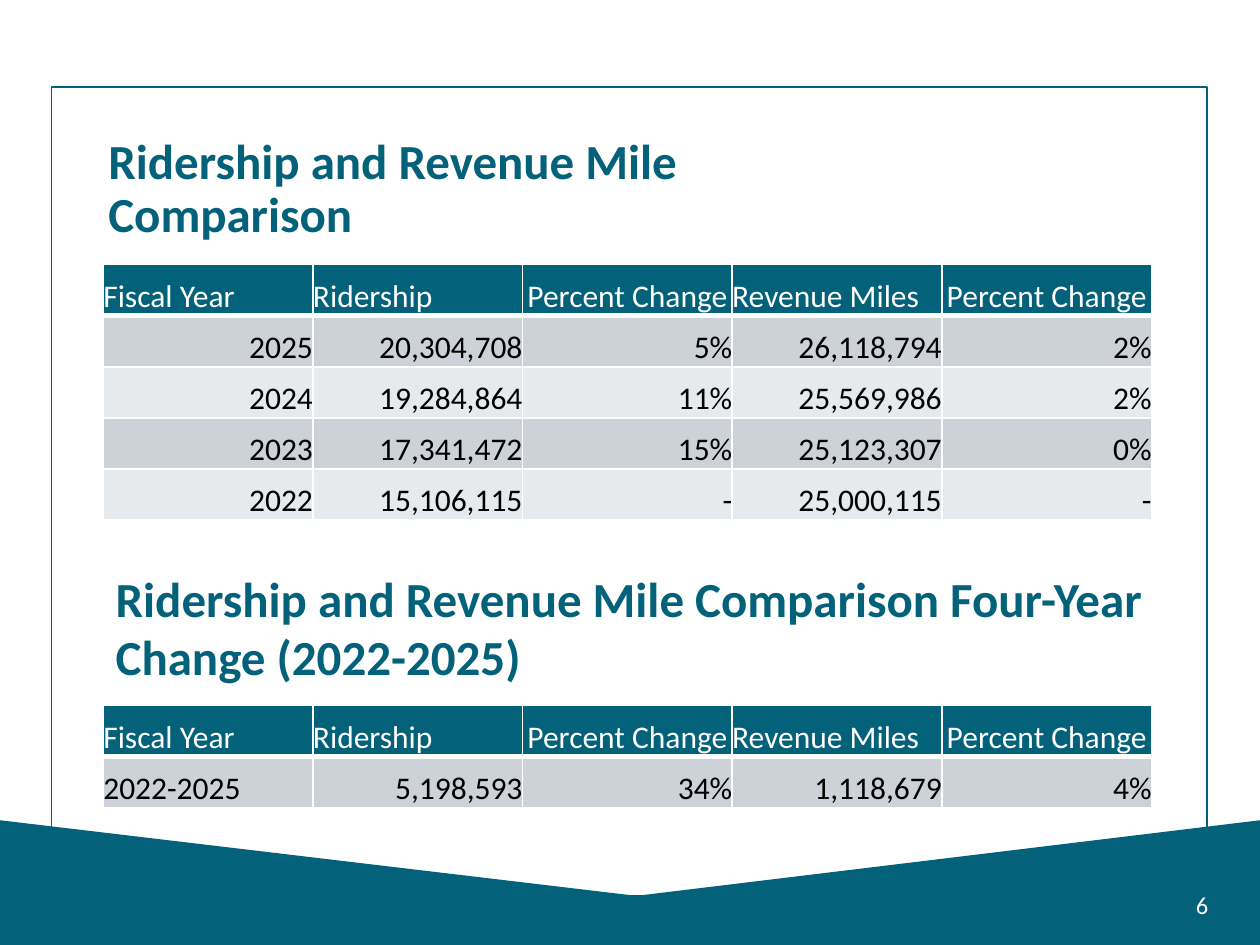
from collections import namedtuple

from lxml.etree import SubElement
from pptx import Presentation
from pptx.dml.color import RGBColor
from pptx.enum.shapes import MSO_SHAPE
from pptx.enum.text import MSO_ANCHOR as ANCHOR, MSO_AUTO_SIZE as AUTO, PP_ALIGN as ALIGN
from pptx.oxml.ns import qn
from pptx.util import Inches, Pt

TEAL = RGBColor(0x03, 0x61, 0x7A)
WHITE = RGBColor(0xFF, 0xFF, 0xFF)
BLACK = RGBColor(0x00, 0x00, 0x00)
BANDS = RGBColor(0xCC, 0xD2, 0xD7), RGBColor(0xE7, 0xEA, 0xEC)
FONT = "Calibri"
W, H = Inches(10), Inches(7.5)
ROW_SHARE = 5.41

HEADER = ["Fiscal Year", "Ridership", "Percent Change", "Revenue Miles", "Percent Change"]
YEARLY = [
    ["2025", "20,304,708", "5%", "26,118,794", "2%"],
    ["2024", "19,284,864", "11%", "25,569,986", "2%"],
    ["2023", "17,341,472", "15%", "25,123,307", "0%"],
    ["2022", "15,106,115", "-", "25,000,115", "-"],
]
FOUR_YEAR = [["2022-2025", "5,198,593", "34%", "1,118,679", "4%"]]

Box = namedtuple("Box", "x y w h")


def share(x, y, w, h):
    """Return a box from percentages of the slide's width and height."""
    return Box(int(W * x / 100), int(H * y / 100), int(W * w / 100), int(H * h / 100))


def add_run(p, text, size, color, bold=False):
    """Add one formatted run to a paragraph and return it."""
    r = p.add_run()
    r.text = text
    r.font.name, r.font.size, r.font.bold = FONT, Pt(size), bold
    r.font.color.rgb = color
    return r


def add_band(slide, box):
    """Draw the notched band along the bottom of the slide."""
    outline = [(0, 0), (0.5, 0.6), (0.51, 0.6), (1, 0), (1, 1), (0, 1)]
    points = [(box.x + box.w * u, box.y + box.h * v) for u, v in outline]
    builder = slide.shapes.build_freeform(*points[0])
    builder.add_line_segments(points[1:], close=True)
    sp = builder.convert_to_shape()
    sp.shadow.inherit = False
    sp.fill.solid()
    sp.fill.fore_color.rgb = TEAL
    sp.line.fill.background()


def add_frame(slide, box):
    """Draw the thin frame around the content."""
    sp = slide.shapes.add_shape(MSO_SHAPE.RECTANGLE, *box)
    sp.shadow.inherit = False
    sp.fill.background()
    sp.line.color.rgb = TEAL
    sp.line.width = Pt(1)


def add_page_number(slide, box, number):
    """Write the page number on the band."""
    tf = slide.shapes.add_textbox(*box).text_frame
    tf.word_wrap = True
    tf.vertical_anchor = ANCHOR.BOTTOM
    tf.margin_left = tf.margin_right = 0
    p = tf.paragraphs[0]
    p.alignment = ALIGN.RIGHT
    r = add_run(p, number, 14, WHITE)
    r.font._element.set("spc", "110")


def fill_heading(sp, text, spacing=1.0):
    """Write a bold heading into a title placeholder or text box."""
    tf = sp.text_frame
    tf.word_wrap = True
    tf.auto_size = AUTO.SHAPE_TO_FIT_TEXT
    tf.vertical_anchor = ANCHOR.TOP
    p = tf.paragraphs[0]
    p.alignment = ALIGN.LEFT
    p.line_spacing = spacing
    add_run(p, text, 28, TEAL, bold=True)


def add_title(slide, box, text):
    """Place and fill the title placeholder."""
    sp = slide.shapes.title
    sp.left, sp.top, sp.width, sp.height = box
    fill_heading(sp, text, 0.9)


def add_subheading(slide, box, text):
    """Add the heading of the lower table."""
    fill_heading(slide.shapes.add_textbox(*box), text)


def set_borders(cell, top, bottom):
    """Give a cell white borders, with top and bottom widths in points."""
    tc_pr = cell._tc.get_or_add_tcPr()
    for i, (side, width) in enumerate(zip("LRTB", (1, 1, top, bottom))):
        ln = SubElement(tc_pr, qn(f"a:ln{side}"), w=str(Pt(width)))
        SubElement(SubElement(ln, qn("a:solidFill")), qn("a:srgbClr"), val=str(WHITE))
        tc_pr.remove(ln)
        tc_pr.insert(i, ln)


def fill_cell(cell, text, align, color, fill):
    """Write and colour one table cell."""
    cell.fill.solid()
    cell.fill.fore_color.rgb = fill
    cell.vertical_anchor = ANCHOR.BOTTOM
    cell.margin_left = cell.margin_right = cell.margin_top = cell.margin_bottom = 0
    p = cell.text_frame.paragraphs[0]
    p.alignment = align
    add_run(p, text, 18, color)


def add_comparison(slide, x, y, w, body, year_align):
    """Add a table with a dark header row above banded rows."""
    rows = [HEADER] + body
    box = share(x, y, w, ROW_SHARE * len(rows))
    table = slide.shapes.add_table(len(rows), len(HEADER), *box).table
    for i, row in enumerate(rows):
        for j, text in enumerate(row):
            cell = table.cell(i, j)
            if i == 0:
                align = ALIGN.CENTER if text == "Percent Change" else ALIGN.LEFT
                fill_cell(cell, text, align, WHITE, TEAL)
            else:
                align = year_align if j == 0 else ALIGN.RIGHT
                fill_cell(cell, text, align, BLACK, BANDS[(i - 1) % 2])
            set_borders(cell, 3 if i == 1 else 1, 3 if i == 0 else 1)


def main():
    """Build and save the slide."""
    prs = Presentation()
    prs.slide_width, prs.slide_height = W, H
    slide = prs.slides.add_slide(prs.slide_layouts[5])
    add_band(slide, share(0, 86.8, 100, 13.2))
    add_frame(slide, share(4.1, 9.2, 91.7, 88.8))
    add_page_number(slide, share(86.2, 92.67, 9.7, 5.33), "6")
    add_title(slide, share(7.6, 13.87, 66, 12.67), "Ridership and Revenue Mile Comparison")
    add_comparison(slide, 8.2, 28, 83.2, YEARLY, ALIGN.RIGHT)
    add_subheading(slide, share(8.2, 59.47, 88.4, 13.87),
                   "Ridership and Revenue Mile Comparison Four-Year Change (2022-2025)")
    add_comparison(slide, 8.2, 74.67, 83.2, FOUR_YEAR, ALIGN.LEFT)
    prs.save("out.pptx")


if __name__ == "__main__":
    main()
